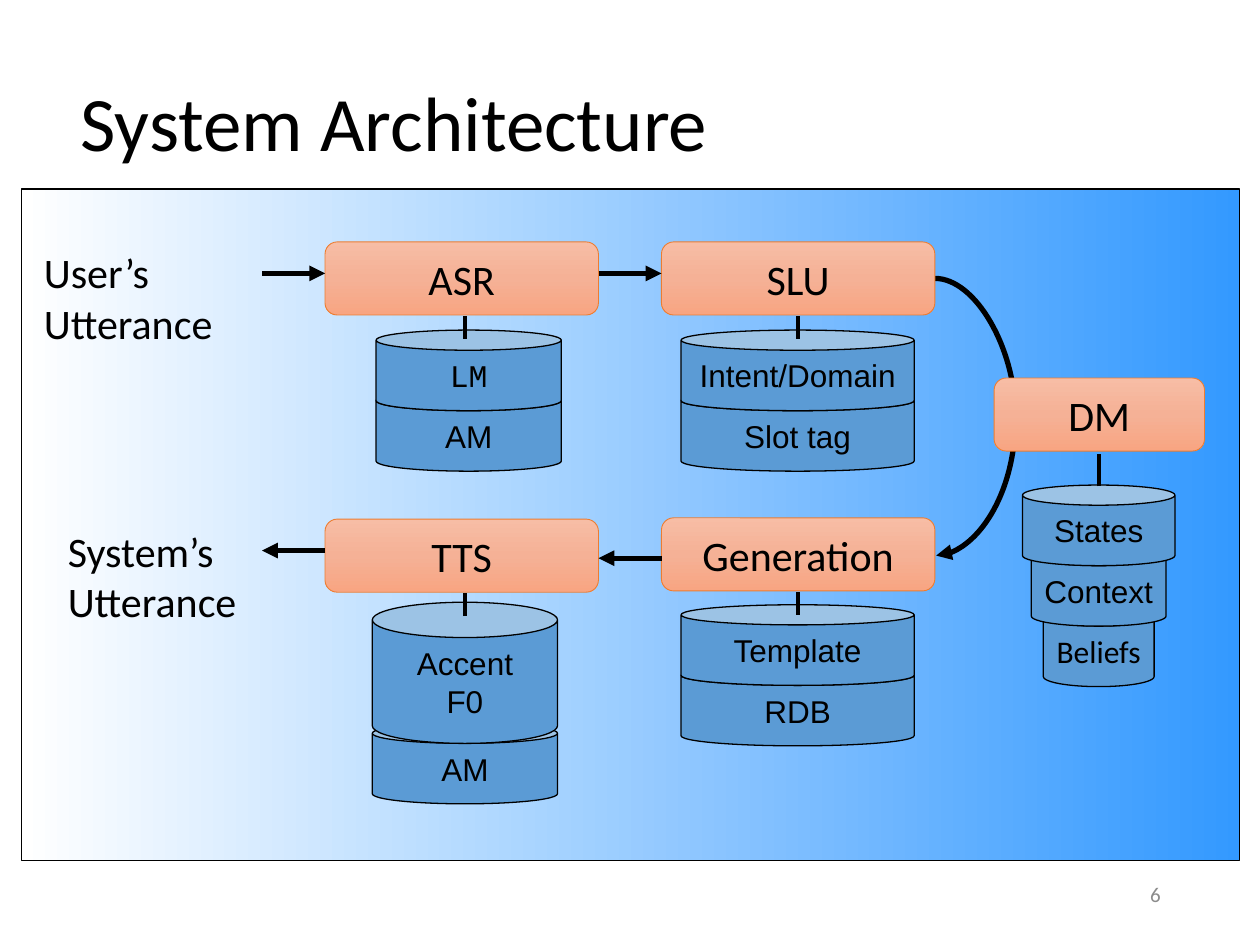
"""Build the System Architecture slide of a spoken dialogue system."""
from lxml import etree
from pptx import Presentation
from pptx.dml.color import RGBColor
from pptx.enum.shapes import MSO_CONNECTOR, MSO_SHAPE
from pptx.enum.text import MSO_ANCHOR, PP_ALIGN
from pptx.oxml import parse_xml
from pptx.oxml.ns import nsdecls, qn
from pptx.util import Inches, Pt

RECT, ROUND, CAN = MSO_SHAPE.RECTANGLE, MSO_SHAPE.ROUNDED_RECTANGLE, MSO_SHAPE.CAN
LINE, CURVE = MSO_CONNECTOR.STRAIGHT, MSO_CONNECTOR.CURVE
LEFT, MID, RIGHT = PP_ALIGN.LEFT, PP_ALIGN.CENTER, PP_ALIGN.RIGHT
TOP, CENTER = MSO_ANCHOR.TOP, MSO_ANCHOR.MIDDLE

COLORS = {"ink": "000000", "gray": "8C8C8C", "can": "5B9BD5", "edge": "ED7D31"}
PANEL = [(0, "FFFFFF"), (100, "3399FF")]
PEACH = [(0, "F7BDA5"), (50, "F5B196"), (100, "F8A582")]

TITLE = "System Architecture"
LABELS = [("User’s\nUtterance", 0.25, 1.91), ("System’s\nUtterance", 0.44, 4.12)]
BOXES = [
    ("ASR", 2.58, 1.92, 2.17),
    ("SLU", 5.25, 1.92, 2.17),
    ("Generation", 5.25, 4.11, 2.17),
    ("TTS", 2.58, 4.12, 2.17),
    ("DM", 7.89, 3, 1.67),
]
ARROWS = [
    (4.75, 5.25, 2.17),
    (5.25, 4.75, 4.43),
    (2.08, 2.58, 2.17),
    (2.58, 2.08, 4.37),
]
STACKS = [
    (3.72, 2.62, [("LM", 1.47, 0.64, "Courier New"), ("AM", 1.47, 0.64, "Arial")]),
    (3.69, 4.78, [("Accent\nF0", 1.47, 1.12, "Arial"), ("AM", 1.47, 0.64, "Arial")]),
    (6.33, 2.62, [("Intent/Domain", 1.85, 0.64, "Arial"),
                  ("Slot tag", 1.85, 0.64, "Arial")]),
    (6.33, 4.8, [("Template", 1.85, 0.64, "Arial"), ("RDB", 1.85, 0.64, "Arial")]),
    (8.72, 3.85, [("States", 1.21, 0.64, "Arial"), ("Context", 1.07, 0.64, "Arial"),
                  ("Beliefs", 0.88, 0.64, "Calibri")]),
]
STEMS = [(3.69, 2.51, 2.69), (3.69, 4.71, 4.89), (6.33, 2.51, 2.69),
         (6.33, 4.7, 4.88), (8.72, 3.6, 3.86)]
BOX_H, LAP = 0.58, 0.16


def rgb(name):
    return RGBColor.from_string(COLORS[name])


def write(shape, text, size, font="Calibri", align=MID, anchor=TOP, color="ink", wrap=False):
    frame = shape.text_frame
    frame.text = text
    frame.word_wrap = wrap
    frame.vertical_anchor = anchor
    for para in frame.paragraphs:
        para.alignment = align
        for run in para.runs:
            run.font.size = Pt(size)
            run.font.name = font
            run.font.color.rgb = rgb(color)
    return frame


def label(slide, area, *args, **style):
    return write(slide.shapes.add_textbox(*map(Inches, area)), *args, **style)


def block(slide, kind, area, edge, width):
    shape = slide.shapes.add_shape(kind, *map(Inches, area))
    shape.shadow.inherit = False
    shape.line.color.rgb = rgb(edge)
    shape.line.width = Pt(width)
    return shape


def shade(shape, stops, angle):
    marks = "".join(f'<a:gs pos="{pos * 1000}"><a:srgbClr val="{tone}"/></a:gs>'
                    for pos, tone in stops)
    grad = parse_xml(f'<a:gradFill {nsdecls("a")} rotWithShape="1"><a:gsLst>{marks}</a:gsLst>'
                     f'<a:lin ang="{angle * 60000}" scaled="0"/></a:gradFill>')
    shape._element.spPr.find(qn("a:prstGeom")).addnext(grad)


def link(slide, ends, width, head=True, kind=LINE):
    line = slide.shapes.add_connector(kind, *map(Inches, ends))
    line.line.color.rgb = rgb("ink")
    line.line.width = Pt(width)
    props = line._element.spPr
    if head:
        etree.SubElement(props.find(qn("a:ln")), qn("a:tailEnd"), type="triangle")
    etree.SubElement(props, qn("a:effectLst"))
    return line


def bend(line, percent):
    geom = line._element.spPr.find(qn("a:prstGeom"))
    guides = geom.find(qn("a:avLst"))
    if guides is None:
        guides = etree.SubElement(geom, qn("a:avLst"))
    etree.SubElement(guides, qn("a:gd"), name="adj1", fmla=f"val {percent * 1000}")


def stack(slide, mid, top, cans):
    places = []
    for text, width, height, font in cans:
        places.append((text, font, (mid - width / 2, top, width, height)))
        top += height - LAP
    for text, font, area in reversed(places):
        shape = block(slide, CAN, area, "ink", 0.75)
        shape.fill.solid()
        shape.fill.fore_color.rgb = rgb("can")
        write(shape, text, 18, font)


def main():
    deck = Presentation()
    deck.slide_width, deck.slide_height = Inches(10), Inches(7.5)
    slide = deck.slides.add_slide(deck.slide_layouts[6])

    shade(block(slide, RECT, (0.17, 1.5, 9.67, 5.33), "ink", 0.75), PANEL, 0)
    title = label(slide, (0.54, 0.55, 8.84, 0.91), TITLE, 44,
                  align=LEFT, anchor=CENTER, wrap=True)
    title.paragraphs[0].line_spacing = 0.9
    bend(link(slide, (7.42, 2.21, 7.43, 4.41), 3, kind=CURVE), 6500)

    for text, left, top, width in BOXES:
        shape = block(slide, ROUND, (left, top, width, BOX_H), "edge", 0.5)
        shade(shape, PEACH, 90)
        write(shape, text, 24, anchor=CENTER)
    for start, end, y in ARROWS:
        link(slide, (start, y, end, y), 3)
    for text, left, top in LABELS:
        label(slide, (left, top, 1.56, 0.91), text, 24, align=LEFT)
    for mid, top, cans in STACKS:
        stack(slide, mid, top, cans)
    for x, top, low in STEMS:
        link(slide, (x, low, x, top), 2.25, head=False)

    label(slide, (7.06, 6.95, 2.25, 0.4), "6", 12, align=RIGHT, color="gray", wrap=True)
    deck.save("out.pptx")


if __name__ == "__main__":
    main()
